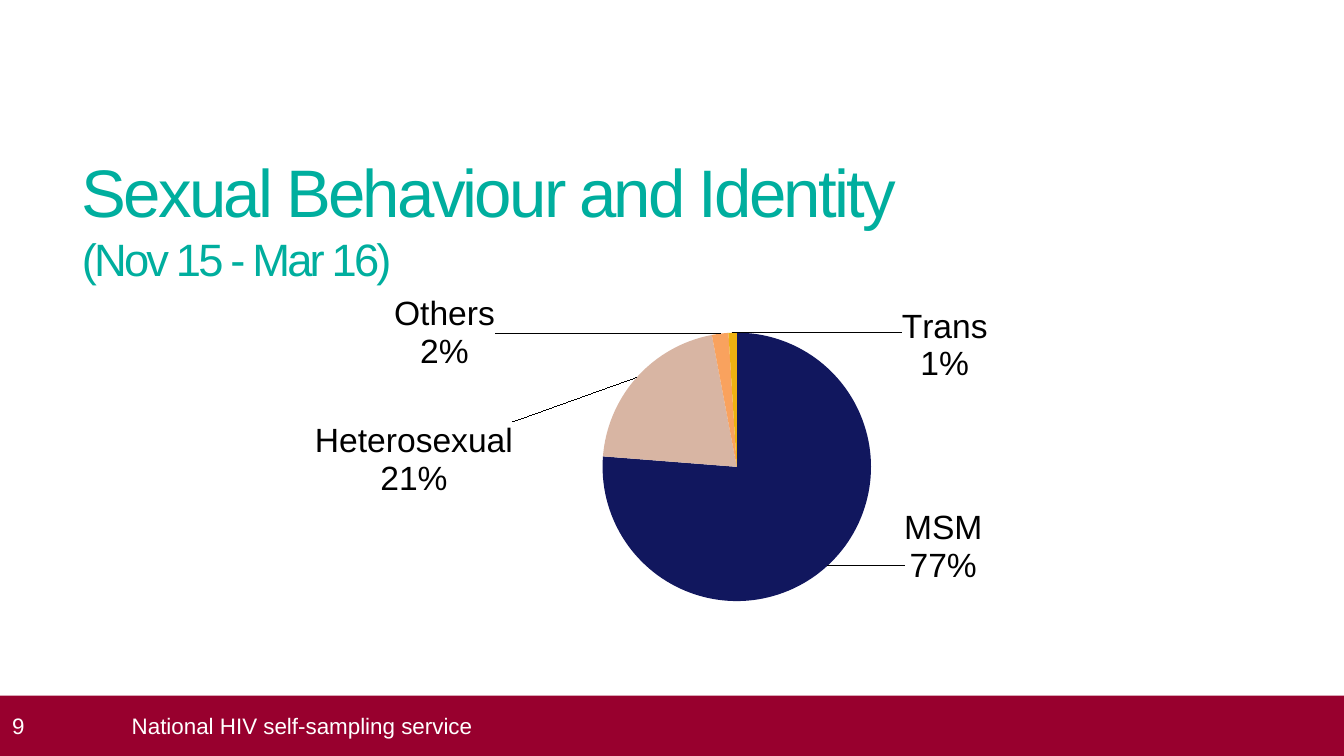
from lxml.etree import fromstring
from pptx import Presentation
from pptx.chart.data import CategoryChartData
from pptx.dml.color import RGBColor
from pptx.enum.chart import XL_CHART_TYPE
from pptx.enum.shapes import MSO_SHAPE
from pptx.enum.text import MSO_ANCHOR, PP_ALIGN
from pptx.oxml.ns import nsdecls
from pptx.util import Inches, Pt

WIDE = 10
HIGH = WIDE * 9 / 16
LEFT, SPAN = 0.61, 8.78
BAR = 0.45
FONT = "Arial"
TEAL, WINE, WHITE, BLACK = "00AE9E", "98002E", "FFFFFF", "000000"
TITLE = [("Sexual Behaviour and Identity", 36), ("(Nov 15 - Mar 16)", 24.3)]
PAGE, FOOTER = "9", "National HIV self-sampling service"
GROUPS = [
    ("MSM", 77, "11175E", (0.06, -0.14)),
    ("Heterosexual", 21, "D8B5A3", (-0.1, 0.28)),
    ("Others", 2, "F9A25E", (-0.19, 0.1)),
    ("Trans", 1, "EEB111", (0.18, 0.13)),
]
PIE = {"x": 0.44, "y": 0.23, "w": 0.23, "h": 0.6}


def color(code):
    return RGBColor.from_string(code)


def style(font, size, code):
    font.name, font.size = FONT, Pt(size)
    font.color.rgb = color(code)


def frame(shape, inset=0, anchor=MSO_ANCHOR.MIDDLE):
    text = shape.text_frame
    text.word_wrap = True
    text.vertical_anchor = anchor
    text.margin_left = Inches(inset)
    text.margin_top = text.margin_right = text.margin_bottom = 0
    para = text.paragraphs[0]
    para.alignment = PP_ALIGN.LEFT
    return para


def write(para, words, size, code):
    run = para.add_run()
    run.text = words
    style(run.font, size, code)
    return run


def layout(parts, inner=False):
    tags = '<c:layoutTarget val="inner"/>' if inner else ""
    if inner:
        tags += '<c:xMode val="edge"/><c:yMode val="edge"/>'
    tags += "".join(f'<c:{k} val="{v}"/>' for k, v in parts.items())
    return fromstring(f'<c:layout {nsdecls("c")}><c:manualLayout>{tags}</c:manualLayout></c:layout>')


def label(index, shift):
    item = fromstring(
        f'<c:dLbl {nsdecls("c")}><c:idx val="{index}"/>'
        '<c:dLblPos val="outEnd"/><c:showLegendKey val="0"/><c:showVal val="1"/>'
        '<c:showCatName val="1"/><c:showSerName val="0"/><c:showPercent val="0"/>'
        '<c:showBubbleSize val="0"/><c:separator>\n</c:separator></c:dLbl>'
    )
    item.insert(1, layout(dict(zip("xy", shift))))
    return item


deck = Presentation()
deck.slide_width, deck.slide_height = Inches(WIDE), Inches(HIGH)
slide = deck.slides.add_slide(deck.slide_layouts[6])
shapes = slide.shapes


def box(*place):
    return shapes.add_textbox(*map(Inches, place))


para = frame(box(LEFT, 1.12, SPAN, 0.53), anchor=MSO_ANCHOR.TOP)
for i, (words, size) in enumerate(TITLE):
    if i:
        para.add_line_break()
    run = write(para, words, size, TEAL)
    run.font._element.set("spc", "-150")

band = shapes.add_shape(MSO_SHAPE.RECTANGLE, *map(Inches, (0, HIGH - BAR, WIDE, BAR)))
band.shadow.inherit = False
band.fill.solid()
band.fill.fore_color.rgb = color(WINE)
band.line.fill.background()
write(frame(band, 0.09), PAGE, 12, WHITE)
write(frame(box(0.98, HIGH - BAR, 8.82, BAR)), FOOTER, 12, WHITE)

data = CategoryChartData()
data.categories = [name for name, *_ in GROUPS]
data.add_series("Series 1", [value for _, value, *_ in GROUPS])
place = map(Inches, (LEFT, 1.71, SPAN, 3.33))
chart = shapes.add_chart(XL_CHART_TYPE.PIE, *place, data).chart
chart.has_title = chart.has_legend = False
style(chart.font, 18, BLACK)
plot = chart.plots[0]
plot.vary_by_categories = True
area = plot._element.getparent()
for old in area.findall("{*}layout"):
    area.remove(old)
area.insert(0, layout(PIE, True))

series = plot.series[0]
labels = series.data_labels
labels.show_value = labels.show_category_name = True
labels.number_format, labels.number_format_is_linked = '0"%"', False
style(labels.font, 18, BLACK)
root = labels._element
for lead in root.findall("{*}showLeaderLines"):
    lead.set("val", "1")
for i, (_, _, code, shift) in enumerate(GROUPS):
    fill = series.points[i].format.fill
    fill.solid()
    fill.fore_color.rgb = color(code)
    root.insert(i, label(i, shift))

deck.save("out.pptx")
